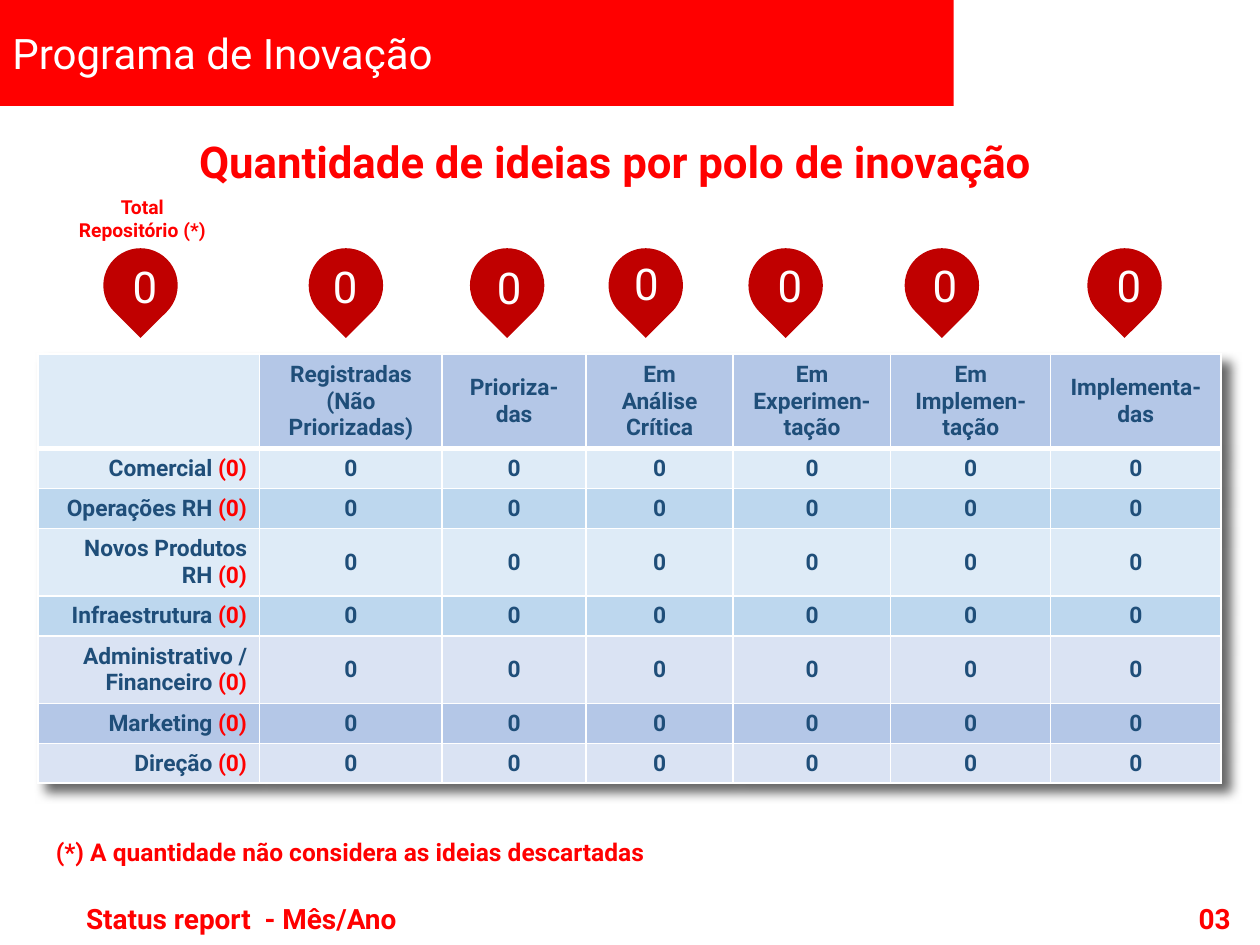
from dataclasses import dataclass

import lxml.etree
import pptx
import pptx.dml.color
import pptx.enum.shapes
import pptx.enum.text
import pptx.oxml
import pptx.oxml.ns
import pptx.shapes.autoshape
import pptx.slide
import pptx.table
import pptx.text.text
import pptx.util

EMU_PER_PX = 9144  # 100 px to the inch
ALIGN = pptx.enum.text.PP_ALIGN
ANCHOR = pptx.enum.text.MSO_ANCHOR
SHAPE = pptx.enum.shapes.MSO_SHAPE


@dataclass(frozen=True)
class Theme:
    font: str = "Roboto"
    red: str = "FF0000"
    pin: str = "C00000"
    white: str = "FFFFFF"
    navy: str = "1F4E79"
    pale_blue: str = "DEEBF7"
    sky: str = "BDD7EE"
    pale_indigo: str = "DAE3F3"
    indigo: str = "B4C7E7"
    heading: int = 25
    band: int = 24
    footer: int = 16
    note: int = 14
    table: int = 13
    label: int = 11


@dataclass(frozen=True)
class Box:
    left: int
    top: int
    width: int
    height: int

    def emu(self) -> tuple[int, ...]:
        return tuple(px(side) for side in (self.left, self.top, self.width, self.height))


@dataclass(frozen=True)
class Pin:
    """A counter: left edge of the drop, and the box of its number."""
    left: int
    number: Box


@dataclass(frozen=True)
class Area:
    name: str
    fill: str


THEME = Theme()
PINS = [
    Pin(82, Box(81, 206, 68, 42)),
    Pin(245, Box(240, 206, 68, 42)),
    Pin(373, Box(333, 207, 142, 42)),
    Pin(483, Box(442, 204, 142, 42)),
    Pin(594, Box(595, 205, 64, 42)),
    Pin(718, Box(718, 205, 64, 42)),
    Pin(863, Box(864, 205, 64, 42)),
]
STAGES = ["", "Registradas (Não Priorizadas)", "Prioriza-\ndas", "Em\nAnálise Crítica",
          "Em Experimen-tação", "Em Implemen-tação", "Implementa-das"]
COLUMN_WIDTHS = [176, 145, 114, 117, 125, 127, 135]
ROW_HEIGHT = 31
AREAS = [
    Area("Comercial", THEME.pale_blue),
    Area("Operações RH", THEME.sky),
    Area("Novos Produtos RH", THEME.pale_blue),
    Area("Infraestrutura", THEME.sky),
    Area("Administrativo / Financeiro", THEME.pale_indigo),
    Area("Marketing", THEME.indigo),
    Area("Direção", THEME.pale_indigo),
]


def px(length: int) -> int:
    return length * EMU_PER_PX


def rgb(code: str) -> pptx.dml.color.RGBColor:
    return pptx.dml.color.RGBColor.from_string(code)


def add_span(para, text: str, *, size: int, color: str, bold: bool = False) -> None:
    span = para.add_run()
    span.text = text
    span.font.name = THEME.font
    span.font.size = pptx.util.Pt(size)
    span.font.bold = bold
    span.font.color.rgb = rgb(color)


def write(frame: pptx.text.text.TextFrame, text: str, *, size: int, color: str,
          bold: bool = False, align: ALIGN = ALIGN.CENTER) -> None:
    """Fill the frame with one paragraph for each line of text."""
    for index, line in enumerate(text.split("\n")):
        para = frame.add_paragraph() if index else frame.paragraphs[0]
        para.alignment = align
        add_span(para, line, size=size, color=color, bold=bold)


def set_frame(frame: pptx.text.text.TextFrame, *, inset: bool = False,
              wrap: bool = True) -> None:
    """Inset frames centre vertically; the others hug their text from the top."""
    side, edge = (px(10), px(5)) if inset else (0, 0)
    frame.margin_left = frame.margin_right = side
    frame.margin_top = frame.margin_bottom = edge
    frame.vertical_anchor = ANCHOR.MIDDLE if inset else ANCHOR.TOP
    sizes = pptx.enum.text.MSO_AUTO_SIZE
    frame.auto_size = sizes.NONE if inset else sizes.SHAPE_TO_FIT_TEXT
    frame.word_wrap = wrap


def add_text(shapes, box: Box, text: str, *, size: int, color: str = THEME.red,
             bold: bool = True, inset: bool = False, wrap: bool = True) -> None:
    frame = shapes.add_textbox(*box.emu()).text_frame
    set_frame(frame, inset=inset, wrap=wrap)
    write(frame, text, size=size, color=color, bold=bold)


def add_solid(shapes, kind: SHAPE, box: Box, fill: str) -> pptx.shapes.autoshape.Shape:
    shape = shapes.add_shape(kind, *box.emu())
    shape.shadow.inherit = False
    shape.fill.solid()
    shape.fill.fore_color.rgb = rgb(fill)
    shape.line.fill.background()
    return shape


def add_pin(page: pptx.slide.Slide, pin: Pin) -> None:
    shapes = page.shapes.add_group_shape().shapes
    add_solid(shapes, SHAPE.TEAR, Box(pin.left, 197, 59, 59), THEME.pin).rotation = 135
    add_text(shapes, pin.number, "0", size=THEME.heading, color=THEME.white, bold=False)


def style_cell(cell, fill: str, *, top: int = 1, bottom: int = 1) -> None:
    """Give the cell its fill and white borders, widths in points."""
    cell.vertical_anchor = ANCHOR.MIDDLE
    properties = cell._tc.get_or_add_tcPr()
    for side, points in {"L": 1, "R": 1, "T": top, "B": bottom}.items():
        line = lxml.etree.SubElement(properties, pptx.oxml.ns.qn(f"a:ln{side}"),
                                     w=str(pptx.util.Pt(points)))
        solid = lxml.etree.SubElement(line, pptx.oxml.ns.qn("a:solidFill"))
        lxml.etree.SubElement(solid, pptx.oxml.ns.qn("a:srgbClr"), val=THEME.white)
    cell.fill.solid()
    cell.fill.fore_color.rgb = rgb(fill)


def add_table_shadow(table: pptx.table.Table) -> None:
    table._tbl.tblPr.insert(0, pptx.oxml.parse_xml(
        f'<a:effectLst {pptx.oxml.ns.nsdecls("a")}>'
        '<a:outerShdw blurRad="76200" dist="88900" dir="2700000" algn="tl" rotWithShape="0">'
        '<a:srgbClr val="000000"><a:alpha val="60000"/></a:srgbClr>'
        '</a:outerShdw></a:effectLst>'))


def add_idea_table(page: pptx.slide.Slide) -> None:
    box = Box(30, 281, sum(COLUMN_WIDTHS), 340)
    holder = page.shapes.add_table(len(AREAS) + 1, len(STAGES), *box.emu())
    table = holder.table
    table.first_row = table.horz_banding = False
    add_table_shadow(table)
    for column, width in zip(table.columns, COLUMN_WIDTHS):
        column.width = px(width)
    for row in table.rows:
        row.height = px(ROW_HEIGHT)
    holder.height = px(box.height)
    body = dict(size=THEME.table, color=THEME.navy, bold=True)

    for index, stage in enumerate(STAGES):
        cell = table.cell(0, index)
        style_cell(cell, THEME.indigo if stage else THEME.pale_blue, bottom=3)
        if stage:
            write(cell.text_frame, stage, **body)
    for number, area in enumerate(AREAS, start=1):
        for index in range(len(STAGES)):
            cell = table.cell(number, index)
            style_cell(cell, area.fill, top=3 if number == 1 else 1)
            if index:
                write(cell.text_frame, "0", **body)
            else:
                write(cell.text_frame, area.name + " ", align=ALIGN.RIGHT, **body)
                add_span(cell.text_frame.paragraphs[0], "(0)",
                         size=THEME.table, color=THEME.red, bold=True)


def add_heading(page: pptx.slide.Slide, box: Box, text: str) -> None:
    title = page.shapes.title
    title.left, title.top, title.width, title.height = box.emu()
    set_frame(title.text_frame, wrap=False)
    write(title.text_frame, text, size=THEME.heading, color=THEME.red, bold=True,
          align=ALIGN.LEFT)


def main() -> None:
    deck = pptx.Presentation()
    deck.slide_width, deck.slide_height = px(1000), px(750)
    page = deck.slides.add_slide(deck.slide_layouts[5])

    band = add_solid(page.shapes, SHAPE.RECTANGLE, Box(0, 0, 757, 84), THEME.red)
    set_frame(band.text_frame, inset=True)
    write(band.text_frame, "Programa de Inovação", size=THEME.band, color=THEME.white,
          align=ALIGN.LEFT)
    add_heading(page, Box(158, 107, 715, 42), "Quantidade de ideias por polo de inovação")
    add_idea_table(page)
    for pin in PINS:
        add_pin(page, pin)
    add_text(page.shapes, Box(60, 155, 106, 37), "Total\nRepositório (*)",
             size=THEME.label, wrap=False)
    add_text(page.shapes, Box(-53, 664, 662, 24),
             "(*) A quantidade não considera as ideias descartadas", size=THEME.note)
    add_text(page.shapes, Box(-8, 718, 399, 22), "Status report  - Mês/Ano",
             size=THEME.footer, inset=True)
    add_text(page.shapes, Box(931, 718, 66, 22), "03", size=THEME.footer, inset=True)
    deck.save("out.pptx")


if __name__ == "__main__":
    main()
